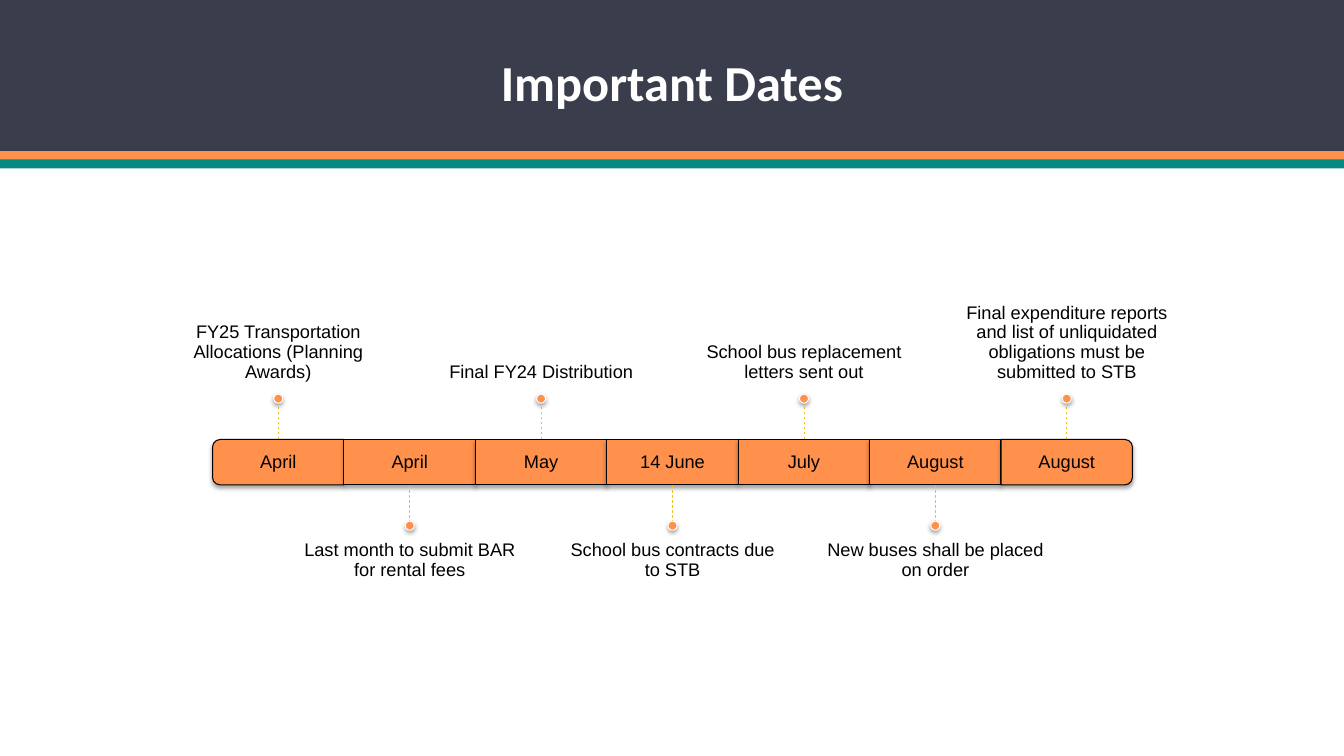
from lxml.etree import SubElement
from pptx import Presentation
from pptx.dml.color import RGBColor
from pptx.enum.dml import MSO_LINE
from pptx.enum.shapes import MSO_CONNECTOR, MSO_SHAPE as SHAPE
from pptx.enum.text import MSO_ANCHOR as ANCHOR, PP_ALIGN
from pptx.oxml.ns import qn
from pptx.util import Inches, Pt

ORANGE, BLACK, WHITE = "FF914D", "000000", "FFFFFF"
hex_color = RGBColor.from_string


def write(box, text, size=13, font="Arial", color=BLACK, bold=False,
          anchor=ANCHOR.MIDDLE, insets=(0.11, 0.11, 0.11, 0.11)):
    frame = box.text_frame
    frame.word_wrap = True
    frame.vertical_anchor = anchor
    (frame.margin_left, frame.margin_top,
     frame.margin_right, frame.margin_bottom) = map(Inches, insets)
    para = frame.paragraphs[0]
    para.alignment = PP_ALIGN.CENTER
    para.line_spacing = 0.9
    span = para.add_run()
    span.text = text
    span.font.size = Pt(size)
    span.font.name = font
    span.font.bold = bold
    span.font.color.rgb = hex_color(color)


def draw(kind, left, top, width, height, fill, line=None):
    shape = page.shapes.add_shape(
        kind, Inches(left), Inches(top), Inches(width), Inches(height))
    shape.fill.solid()
    shape.fill.fore_color.rgb = hex_color(fill)
    shape.shadow.inherit = False
    if line is None:
        shape.line.fill.background()
        return shape
    shape.line.color.rgb = hex_color(line)
    shape.line.width = Pt(0.75)
    effects = shape._element.spPr.find(qn("a:effectLst"))
    shadow = SubElement(effects, qn("a:outerShdw"), blurRad=str(Pt(3.1)),
                        dist=str(Pt(1.8)), dir="5400000", rotWithShape="0")
    shade = SubElement(shadow, qn("a:srgbClr"), val=BLACK)
    SubElement(shade, qn("a:alpha"), val="35000")
    return shape


deck = Presentation()
deck.slide_width = Inches(13.33)
deck.slide_height = Inches(7.5)
page = deck.slides.add_slide(deck.slide_layouts[5])

title = page.shapes.title
for top, height, fill in [(0, 1.5, "3A3D4B"), (1.5, 0.09, ORANGE), (1.58, 0.09, "048A81")]:
    band = draw(SHAPE.RECTANGLE, 0, top, 13.33, height, fill)
    title._element.addprevious(band._element)
title.left, title.top = Inches(0.19), Inches(0.28)
title.width, title.height = Inches(12.95), Inches(1.13)
write(title, "Important Dates", size=36, font="Calibri", color=WHITE, bold=True,
      insets=(0.1, 0.05, 0.1, 0.05))

events = [
    ("April", "FY25 Transportation Allocations (Planning Awards)"),
    ("April", "Last month to submit BAR for rental fees"),
    ("May", "Final FY24 Distribution"),
    ("14 June", "School bus contracts due to STB"),
    ("July", "School bus replacement letters sent out"),
    ("August", "New buses shall be placed on order"),
    ("August", "Final expenditure reports and list of unliquidated obligations "
               "must be submitted to STB"),
]
first_center, last_center = 2.76, 10.58
last = len(events) - 1
pitch = (last_center - first_center) / last
bar_top, bar_height = 4.36, 0.45
bar_bottom = bar_top + bar_height
stem, dot_size = 0.36, 0.09
note_width, note_height = 2.17, 1.57

for index, (month, note) in enumerate(events):
    center = first_center + index * pitch
    left = center - pitch / 2
    above = index % 2 == 0
    is_end = index in (0, last)

    if is_end:
        block = draw(SHAPE.ROUND_2_SAME_RECTANGLE, center - bar_height / 2,
                     bar_top + (bar_height - pitch) / 2, bar_height, pitch, ORANGE, BLACK)
        block.rotation = 270 if index == 0 else 90
        label = page.shapes.add_textbox(
            Inches(left), Inches(bar_top), Inches(pitch), Inches(bar_height))
    else:
        block = label = draw(SHAPE.RECTANGLE, left, bar_top, pitch, bar_height, ORANGE, BLACK)
    write(label, month)

    note_box = page.shapes.add_textbox(
        Inches(center - note_width / 2), Inches(2.33 if above else 5.26),
        Inches(note_width), Inches(note_height))
    write(note_box, note, anchor=ANCHOR.BOTTOM if above else ANCHOR.TOP,
          insets=(0, 0, 0, 0.11) if above else (0, 0.11, 0, 0))

    edge = bar_top if above else bar_bottom
    tip = edge - stem if above else edge + stem
    link = page.shapes.add_connector(
        MSO_CONNECTOR.STRAIGHT, Inches(center), Inches(edge), Inches(center), Inches(tip))
    if not is_end:
        link.begin_connect(block, 0 if above else 2)
    link.line.color.rgb = hex_color("EFC119")
    link.line.width = Pt(0.5)
    link.line.dash_style = MSO_LINE.DASH
    SubElement(link._element.spPr, qn("a:effectLst"))

    draw(SHAPE.OVAL, center - dot_size / 2, tip - dot_size if above else tip,
         dot_size, dot_size, ORANGE, WHITE)

deck.save("out.pptx")
